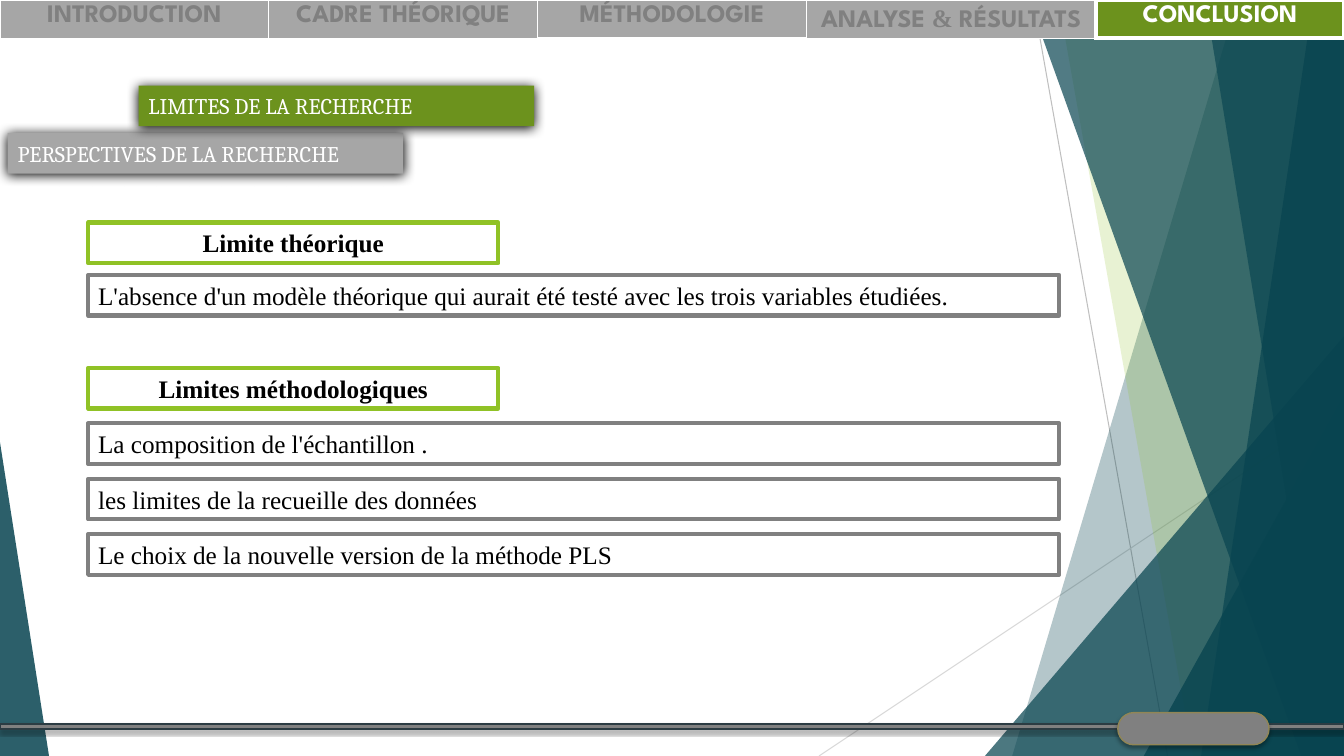
from dataclasses import dataclass

from lxml.etree import SubElement
from pptx import Presentation
from pptx.dml.color import RGBColor
from pptx.enum.shapes import MSO_CONNECTOR, MSO_SHAPE
from pptx.enum.text import MSO_ANCHOR, PP_ALIGN
from pptx.oxml.ns import qn
from pptx.util import Pt


@dataclass(frozen=True)
class Theme:
    """Colours, fonts and type sizes of the slide."""
    teal: str = "084450"
    lime: str = "90C226"
    green: str = "6C921D"
    tab: str = "A6A6A6"
    grey: str = "808080"
    hairline: str = "BFBFBF"
    pale: str = "D9D9D9"
    bar_edge: str = "2C3C43"
    pill_edge: str = "918655"
    white: str = "FFFFFF"
    black: str = "000000"
    nav_font: str = "League Spartan"
    label_font: str = "Cambria"
    body_font: str = "Times New Roman"
    body_size: int = 18
    label_size: int = 16


@dataclass(frozen=True)
class Box:
    """A rectangle in points."""
    x: float
    y: float
    w: float
    h: float

    def pts(self):
        """Return the four lengths as Pt values."""
        return Pt(self.x), Pt(self.y), Pt(self.w), Pt(self.h)


T = Theme()


def rgb(color):
    """Turn a hex string into a colour."""
    return RGBColor.from_string(color)


def paint(sp, fill=None, line=None, width=1, alpha=100):
    """Set the fill, outline and opacity of a shape."""
    sp.shadow.inherit = False
    if fill:
        sp.fill.solid()
        sp.fill.fore_color.rgb = rgb(fill)
        if alpha < 100:
            clr = sp.fill._xPr.find(qn("a:solidFill"))[0]
            SubElement(clr, qn("a:alpha"), val=str(alpha * 1000))
    else:
        sp.fill.background()
    if line:
        sp.line.color.rgb = rgb(line)
        sp.line.width = Pt(width)
    else:
        sp.line.fill.background()


def cast_shadow(sp, alpha, blur, dist):
    """Add a downward outer shadow to a shape."""
    effects = sp._element.spPr.find(qn("a:effectLst"))
    shadow = SubElement(effects, qn("a:outerShdw"), blurRad=str(Pt(blur)),
                        dist=str(Pt(dist)), dir="5400000", rotWithShape="0")
    clr = SubElement(shadow, qn("a:srgbClr"), val=T.black)
    SubElement(clr, qn("a:alpha"), val=str(alpha * 1000))


def add_box(s, kind, box, **look):
    """Add a painted preset shape."""
    sp = s.shapes.add_shape(kind, *box.pts())
    paint(sp, **look)
    return sp


def write(sp, text, font, size, color, align, bold=False):
    """Write one styled paragraph in a shape."""
    tf = sp.text_frame
    tf.word_wrap = True
    tf.vertical_anchor = MSO_ANCHOR.MIDDLE
    p = tf.paragraphs[0]
    p.text = text
    p.alignment = align
    p.font.name, p.font.size, p.font.bold = font, Pt(size), bold
    p.font.color.rgb = rgb(color)


def add_hairline(s, x1, y1, x2, y2, color):
    """Draw a thin diagonal line."""
    c = s.shapes.add_connector(MSO_CONNECTOR.STRAIGHT, Pt(x1), Pt(y1), Pt(x2), Pt(y2))
    c.line.color.rgb = rgb(color)
    c.line.width = Pt(0.75)
    SubElement(c._element.spPr, qn("a:effectLst"))


def add_facet(s, box, top, bottom, color, alpha):
    """Draw a translucent panel reaching the right edge of the box."""
    right, base = box.x + box.w, box.y + box.h
    fb = s.shapes.build_freeform(Pt(top), Pt(box.y))
    fb.add_line_segments([(Pt(right), Pt(box.y)), (Pt(right), Pt(base)),
                          (Pt(bottom), Pt(base))], close=True)
    paint(fb.convert_to_shape(), fill=color, alpha=alpha)


def add_wedge(s, box, apex, alpha):
    """Draw a teal triangle with its apex at 0 (left) or 1 (right)."""
    sp = add_box(s, MSO_SHAPE.ISOSCELES_TRIANGLE, box, fill=T.teal, alpha=alpha)
    sp.adjustments[0] = apex


def add_backdrop(s, box):
    """Draw the faceted decoration on both sides."""
    right, base = box.x + box.w, box.y + box.h
    add_hairline(s, box.x + 738, box.y, box.x + 834, base, T.hairline)
    add_hairline(s, right, box.y + 290, box.x + 585, base, T.pale)
    add_facet(s, box, box.x + 884, box.x + 723, T.teal, 30)
    add_facet(s, box, box.x + 756, box.x + 852, T.lime, 20)
    add_wedge(s, Box(right - 256.5, base - 300, 256.5, 300), 1, 72)
    for top, bottom, alpha in ((735, 929.5, 70), (938, 858, 70), (861, 949, 65)):
        add_facet(s, box, box.x + top, box.x + bottom, T.teal, alpha)
    add_wedge(s, Box(right - 143, base - 257, 143, 257), 1, 80)
    add_wedge(s, Box(box.x, base - 224, 35, 224), 0, 85)


def set_borders(cell, widths):
    """Give a cell white left, right, top and bottom borders."""
    tcPr = cell._tc.get_or_add_tcPr()
    for i, (side, width) in enumerate(zip("LRTB", widths)):
        ln = SubElement(tcPr, qn("a:ln" + side), w=str(Pt(width)))
        SubElement(SubElement(ln, qn("a:solidFill")), qn("a:srgbClr"), val=T.white)
        tcPr.insert(i, ln)


def add_navigation(s, box):
    """Add the chapter bar with the current chapter in green."""
    chapters = (
        (("INTRODUCTION",), 192, (1, 1, 1, 1)),
        (("CADRE THÉORIQUE",), 192, (1, 1.5, 1, 1)),
        (("MÉTHODOLOGIE",), 192, (1.5, 1, 1.5, 1.5)),
        (("ANALYSE ", "& ", "RÉSULTATS"), 207, (1, 3, 1, 1)),
        (("CONCLUSION",), 177, (3, 3, 3, 3)),
    )
    table = s.shapes.add_table(1, len(chapters), *box.pts()).table
    table.first_row = table.horz_banding = False
    for i, (parts, width, borders) in enumerate(chapters):
        current = i == len(chapters) - 1
        table.columns[i].width = Pt(width)
        cell = table.cell(0, i)
        cell.fill.solid()
        cell.fill.fore_color.rgb = rgb(T.green if current else T.tab)
        set_borders(cell, borders)
        p = cell.text_frame.paragraphs[0]
        p.alignment = PP_ALIGN.CENTER
        p.font.size, p.font.bold = Pt(T.body_size), True
        p.font.color.rgb = rgb(T.white if current else T.grey)
        for part in parts:
            r = p.add_run()
            r.text = part
            r.font.name = T.body_font if part == "& " else T.nav_font


def add_label(s, box, text, color):
    """Add a shadowed section label."""
    sp = add_box(s, MSO_SHAPE.RECTANGLE, box, fill=color)
    cast_shadow(sp, 100, 8.5, 1)
    write(sp, text, T.label_font, T.label_size, T.white, PP_ALIGN.LEFT)


def add_limits(s, box, pitch, title, items):
    """Stack a framed title and its framed statements."""
    sp = add_box(s, MSO_SHAPE.RECTANGLE, Box(box.x, box.y, 293, box.h), line=T.lime, width=3)
    write(sp, title, T.body_font, T.body_size, T.black, PP_ALIGN.CENTER, True)
    for i, item in enumerate(items, 1):
        row = Box(box.x, box.y + i * pitch, box.w, box.h)
        sp = add_box(s, MSO_SHAPE.RECTANGLE, row, line=T.grey, width=3)
        write(sp, item, T.body_font, T.body_size, T.black, PP_ALIGN.JUSTIFY)


def add_footer(s, box):
    """Draw the footer bar and its pill."""
    bar = add_box(s, MSO_SHAPE.RECTANGLE, Box(box.x, box.y + 8, box.w, 3.6),
                  fill=T.grey, line=T.bar_edge)
    pill = add_box(s, MSO_SHAPE.ROUNDED_RECTANGLE, Box(box.x + 798.5, box.y, 108, box.h),
                   fill=T.grey, line=T.pill_edge)
    pill.adjustments[0] = 0.5
    for sp in (bar, pill):
        cast_shadow(sp, 35, 3, 2)


def main():
    """Build and save the slide."""
    prs = Presentation()
    prs.slide_width, prs.slide_height = Pt(960), Pt(540)
    s = prs.slides.add_slide(prs.slide_layouts[6])
    add_backdrop(s, Box(0, 0, 960, 540))
    add_navigation(s, Box(0, 0, 960, 16.5))
    add_label(s, Box(5.5, 95, 282.5, 29), "PERSPECTIVES DE LA RECHERCHE", T.tab)
    add_label(s, Box(99, 61.2, 282.5, 29), "LIMITES DE LA RECHERCHE", T.green)
    add_limits(s, Box(63, 159, 693.5, 29), 37.4, "Limite théorique", (
        "L'absence d'un modèle théorique qui aurait été testé avec les trois variables étudiées.",))
    add_limits(s, Box(63, 262.8, 693.5, 29), 39.6, "Limites méthodologiques", (
        "La composition de l'échantillon .",
        "les limites de la recueille des données",
        "Le choix de la nouvelle version de la méthode PLS"))
    add_footer(s, Box(0, 509, 960, 23))
    prs.save("out.pptx")


if __name__ == "__main__":
    main()
